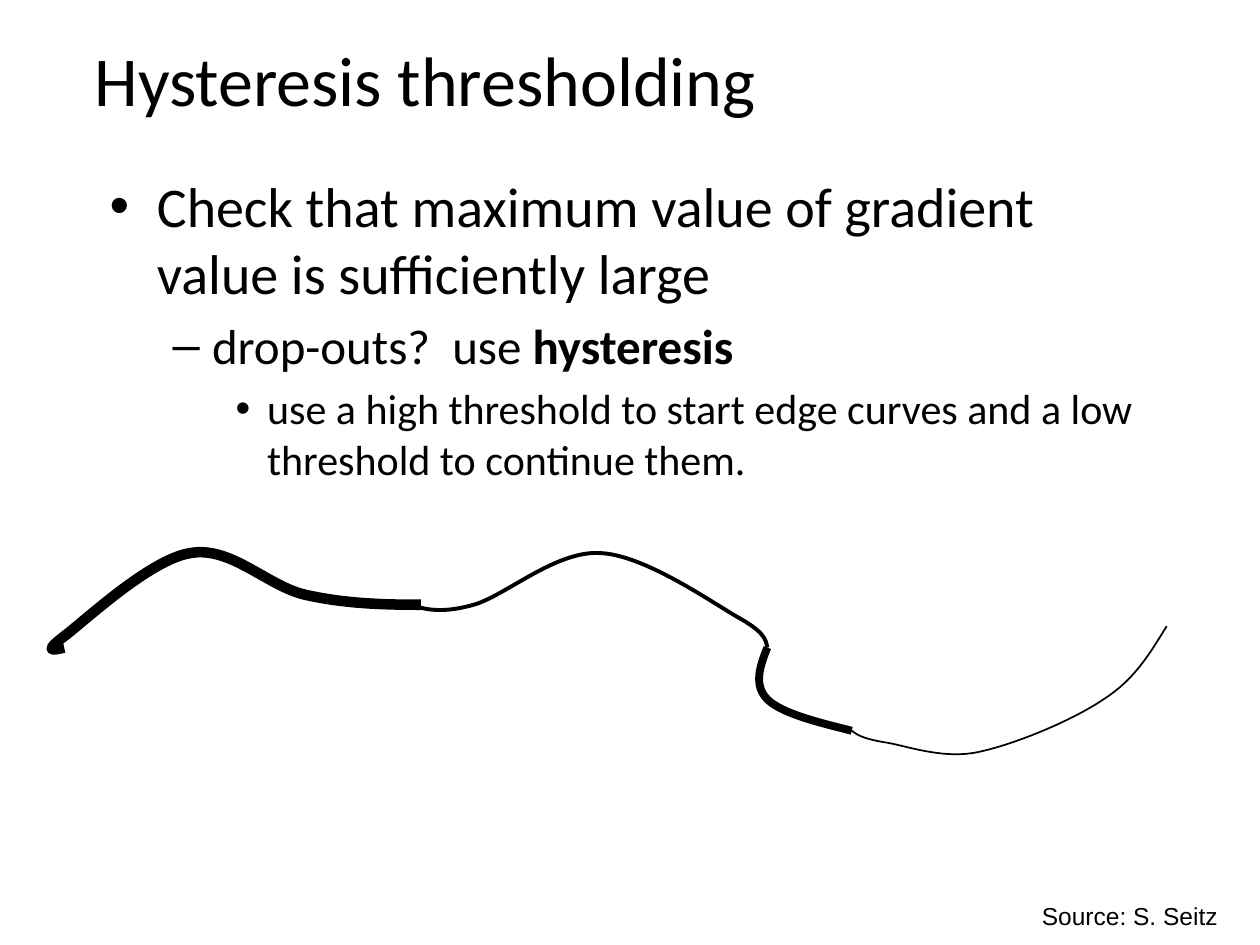
"""Build the slide on hysteresis thresholding with its edge curve."""
from lxml import etree
from pptx import Presentation
from pptx.dml.color import RGBColor
from pptx.enum.text import MSO_ANCHOR, MSO_AUTO_SIZE, PP_ALIGN
from pptx.oxml.ns import qn
from pptx.util import Inches, Pt

LEFT = PP_ALIGN.LEFT
MIDDLE, TOP = MSO_ANCHOR.MIDDLE, MSO_ANCHOR.TOP
NO_FIT = MSO_AUTO_SIZE.NONE

THEME = {
    "ink": RGBColor(0, 0, 0),
    "font": "Calibri",
    "source_font": "Arial",
    "title": 40,
    "levels": (32, 28, 24),
    "source": 14,
}

TITLE = "Hysteresis thresholding"
BULLETS = [
    [("Check that maximum value of gradient value is sufficiently large", False)],
    [("drop-outs?  use ", False), ("hysteresis", True)],
    [("use a high threshold to start edge curves and a low threshold to continue them.", False)],
]
SOURCE = "Source: S. Seitz"

# Each edge is a line width, then a start point followed by Bézier triples.
EDGES = [
    (6, [(0.51, 5.14),
         (0.42, 5.16), (0.34, 5.18), (0.51, 5.05),
         (0.67, 4.93), (1.19, 4.44), (1.51, 4.39),
         (1.83, 4.33), (2.12, 4.65), (2.42, 4.72),
         (2.73, 4.79), (3.03, 4.8), (3.34, 4.8)]),
    (2.25, [(3.26, 4.8),
            (3.38, 4.84), (3.51, 4.87), (3.76, 4.8),
            (4.01, 4.73), (4.41, 4.37), (4.76, 4.39),
            (5.1, 4.4), (5.62, 4.76), (5.84, 4.89),
            (6.06, 5.01), (6.08, 5.07), (6.09, 5.14)]),
    (4.5, [(6.09, 5.14),
           (6.03, 5.29), (5.98, 5.44), (6.09, 5.55),
           (6.2, 5.66), (6.48, 5.73), (6.76, 5.8)]),
    (1, [(6.76, 5.8),
         (6.8, 5.83), (6.84, 5.86), (7.01, 5.89),
         (7.17, 5.91), (7.47, 6.03), (7.76, 5.97),
         (8.05, 5.91), (8.51, 5.72), (8.76, 5.55),
         (9.01, 5.39), (9.13, 5.18), (9.26, 4.97)]),
]


def place(box, left, top, width, height, anchor=TOP):
    box.left, box.top = Inches(left), Inches(top)
    box.width, box.height = Inches(width), Inches(height)
    frame = box.text_frame
    frame.word_wrap = True
    frame.auto_size = NO_FIT
    frame.vertical_anchor = anchor
    return frame


def add_text(para, text, size, font=THEME["font"], bold=False):
    para.alignment = LEFT
    span = para.add_run()
    span.text = text
    span.font.name = font
    span.font.size = Pt(size)
    span.font.bold = bold
    span.font.color.rgb = THEME["ink"]


def add_curve(page, points, width):
    start, *rest = [(Inches(x), Inches(y)) for x, y in points]
    builder = page.shapes.build_freeform(*start)
    builder.add_line_segments(rest, close=False)
    curve = builder.convert_to_shape()
    curve.shadow.inherit = False
    curve.fill.background()
    curve.line.color.rgb = THEME["ink"]
    curve.line.width = Pt(width)
    path = next(curve.element.iter(qn("a:path")))
    segments = path.findall(qn("a:lnTo"))
    for first in range(0, len(segments), 3):
        bezier = etree.SubElement(path, qn("a:cubicBezTo"))
        for segment in segments[first:first + 3]:
            bezier.append(segment[0])
            path.remove(segment)


def main():
    deck = Presentation()
    deck.slide_width, deck.slide_height = Inches(10), Inches(7.5)
    page = deck.slides.add_slide(deck.slide_layouts[1])

    title = place(page.shapes.title, 0.65, 0, 8.5, 1.25, anchor=MIDDLE)
    add_text(title.paragraphs[0], TITLE, THEME["title"])

    body = place(page.placeholders[1], 0.77, 1.31, 8.5, 4.5)
    for level, spans in enumerate(BULLETS):
        para = body.add_paragraph() if level else body.paragraphs[0]
        para.level = level
        for text, bold in spans:
            add_text(para, text, THEME["levels"][level], bold=bold)

    for width, points in EDGES:
        add_curve(page, points, width)

    box = page.shapes.add_textbox(0, 0, 0, 0)
    source = place(box, 8.17, 7.1, 2.16, 0.34)
    add_text(source.paragraphs[0], SOURCE, THEME["source"], font=THEME["source_font"])

    deck.save("out.pptx")


if __name__ == "__main__":
    main()
